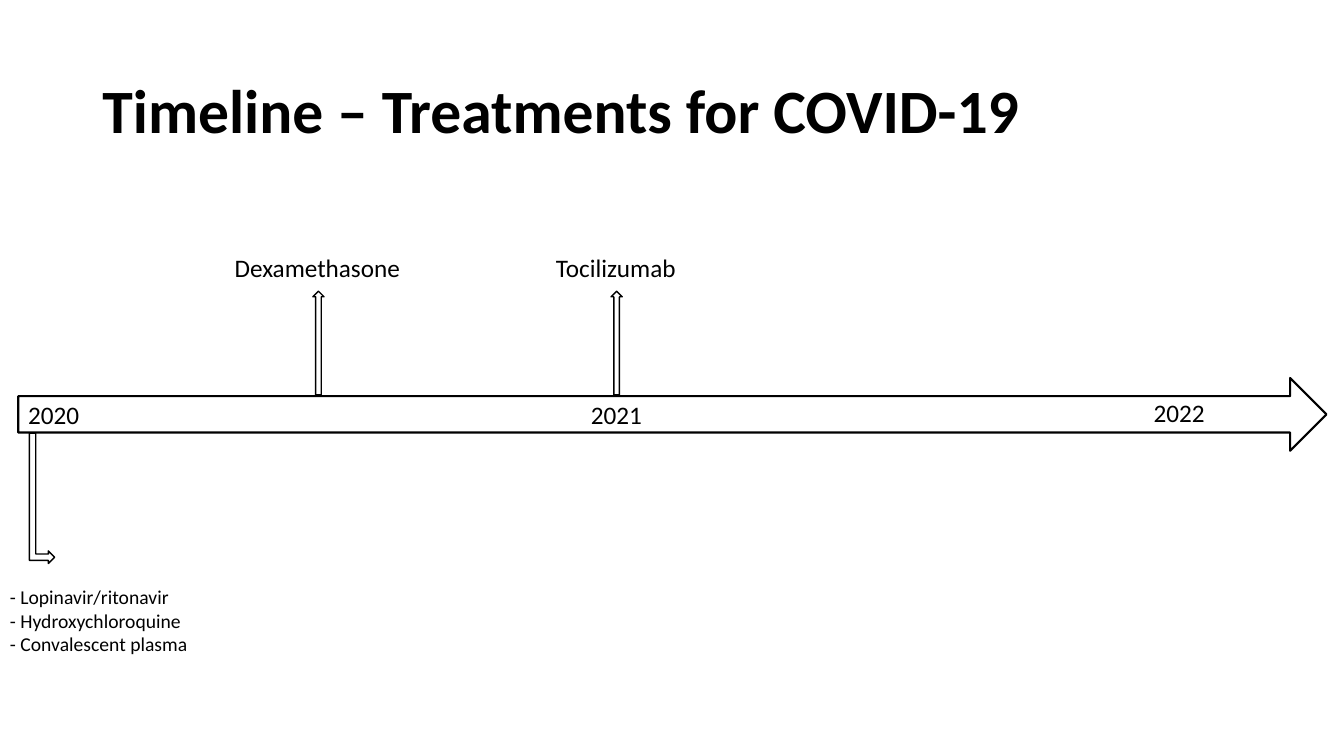
import pptx
import pptx.dml.color
import pptx.enum.shapes
import pptx.enum.text
import pptx.util

Pt = pptx.util.Pt
Shape = pptx.enum.shapes.MSO_SHAPE
Anchor = pptx.enum.text.MSO_ANCHOR
AutoSize = pptx.enum.text.MSO_AUTO_SIZE
BLACK = "000000"


def color(value):
    """Turn a hex string into a colour."""
    return pptx.dml.color.RGBColor.from_string(value)


def write_text(shape, text, size=18, bold=False, spacing=1.0, wrap=False,
               anchor=Anchor.TOP, fit=AutoSize.SHAPE_TO_FIT_TEXT):
    """Fill a shape with left-aligned text, one paragraph per line."""
    frame = shape.text_frame
    frame.text = text
    frame.word_wrap = wrap
    frame.auto_size = fit
    frame.vertical_anchor = anchor
    for paragraph in frame.paragraphs:
        paragraph.alignment = pptx.enum.text.PP_ALIGN.LEFT
        paragraph.line_spacing = spacing
        paragraph.font.name = "Calibri"
        paragraph.font.size = Pt(size)
        paragraph.font.bold = bold
        paragraph.font.color.rgb = color(BLACK)


def add_label(slide, text, left, top, width, height=29, **text_format):
    """Add a text box that fits its text."""
    box = slide.shapes.add_textbox(Pt(left), Pt(top), Pt(width), Pt(height))
    write_text(box, text, **text_format)


def add_arrow(slide, kind, left, top, width, height, line=1, rotation=0):
    """Add an unfilled block arrow with a black outline."""
    arrow = slide.shapes.add_shape(kind, Pt(left), Pt(top), Pt(width), Pt(height))
    arrow.shadow.inherit = False
    arrow.fill.background()
    arrow.line.color.rgb = color(BLACK)
    arrow.line.width = Pt(line)
    arrow.rotation = rotation


def add_title(slide, text, left, top, width, height):
    """Place and format the title placeholder."""
    title = slide.shapes.title
    title.left, title.top, title.width, title.height = map(Pt, (left, top, width, height))
    write_text(title, text, size=44, bold=True, spacing=0.9, wrap=True,
               anchor=Anchor.MIDDLE, fit=AutoSize.NONE)


def add_axis(slide, years, left, top, width, height):
    """Draw the time arrow with evenly spaced years inside it."""
    add_arrow(slide, Shape.RIGHT_ARROW, left, top, width, height, line=1.5)
    for index, year in enumerate(years):
        nudge = -1 if index == len(years) - 1 else 0
        add_label(slide, year, left + index * 402, top + 11.5 + nudge, 51)


def add_treatment(slide, name, center, label_left, label_width, top):
    """Place a treatment name with an arrow rising to it."""
    add_label(slide, name, label_left, top, label_width)
    add_arrow(slide, Shape.UP_ARROW, center - 4, top + 31, 8, 74)


def add_early_treatments(slide, names, left, top):
    """List the first treatments under a bent arrow from the axis."""
    length, thickness = 93, 18
    center_x, center_y = left + 30, top + 33.5
    add_arrow(slide, Shape.BENT_UP_ARROW, center_x - length / 2,
              center_y - thickness / 2, length, thickness, rotation=90)
    add_label(slide, "\n".join(f"- {name}" for name in names),
              left, top + 92, 142.5, 58, size=14)


def main():
    """Build the timeline slide."""
    presentation = pptx.Presentation()
    presentation.slide_width, presentation.slide_height = Pt(960), Pt(540)
    slide = presentation.slides.add_slide(presentation.slide_layouts[5])
    add_title(slide, "Timeline – Treatments for COVID-19", 66, 29, 828, 104)
    add_axis(slide, ("2020", "2021", "2022"), 13, 270, 934.5, 52)
    add_treatment(slide, "Dexamethasone", 227.5, 160.5, 134, 177)
    add_treatment(slide, "Tocilizumab", 440.5, 390, 101, 177)
    add_early_treatments(
        slide, ("Lopinavir/ritonavir", "Hydroxychloroquine", "Convalescent plasma"), 0, 322.5)
    presentation.save("out.pptx")


if __name__ == "__main__":
    main()
